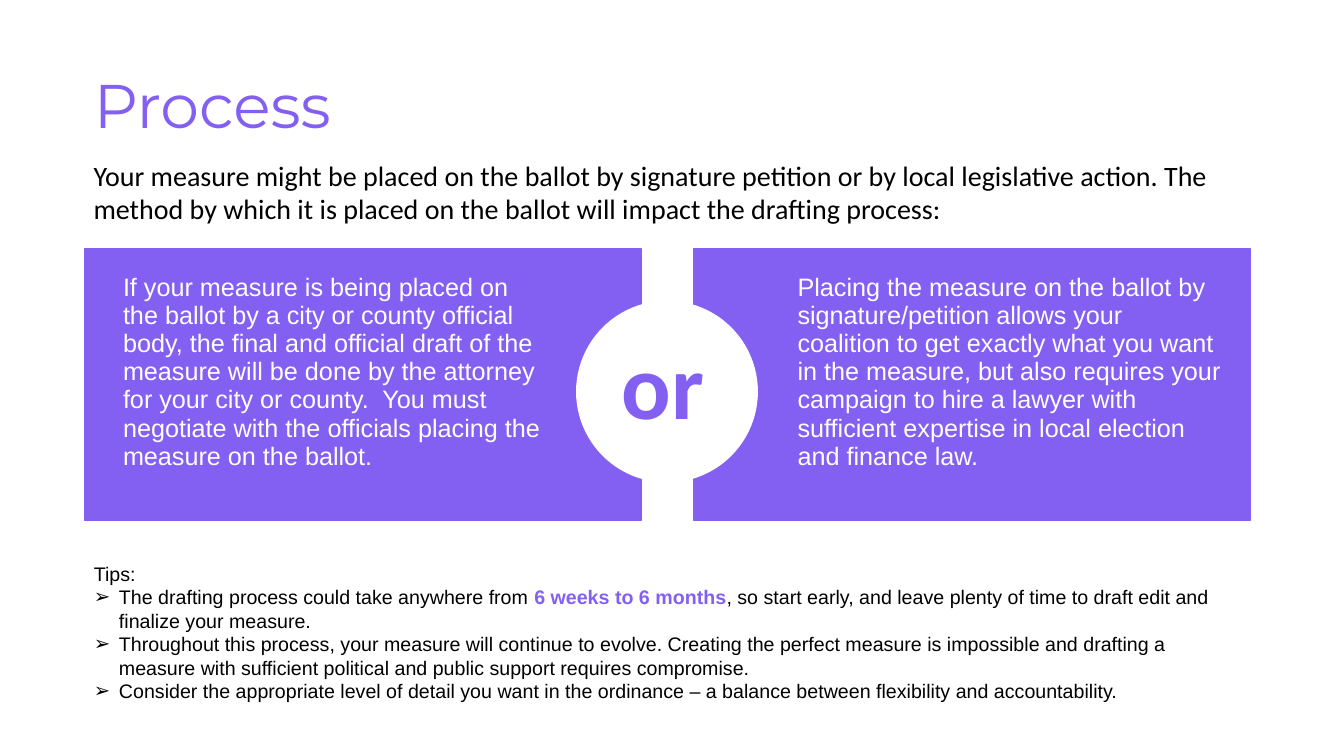
from lxml import etree
from pptx import Presentation
from pptx import util as u
from pptx.dml.color import RGBColor
from pptx.enum import shapes, text
from pptx.oxml import ns

COLORS = {"purple": "8360F2", "white": "FFFFFF", "black": "000000"}


class SlideBuilder:
    """Holds the style and the current slide."""

    def __init__(self, page, font="Arial"):
        self.page = page
        self.font = font

    def color(self, name):
        return RGBColor.from_string(COLORS[name])

    def place(self, box, left, top, width, height):
        box.left, box.top = u.Inches(left), u.Inches(top)
        box.width, box.height = u.Inches(width), u.Inches(height)

    def frame(self, box, anchor=text.MSO_ANCHOR.TOP):
        frame = box.text_frame
        frame.word_wrap = True
        frame.auto_size = text.MSO_AUTO_SIZE.NONE
        frame.vertical_anchor = anchor
        return frame

    def span(self, para, words, size, color, bold=False, font=None):
        span = para.add_run()
        span.text = words
        span.font.name = font or self.font
        span.font.size = u.Pt(size)
        span.font.bold = bold
        span.font.color.rgb = self.color(color)

    def title(self, words, area):
        box = self.page.shapes.title
        self.place(box, *area)
        para = self.frame(box, text.MSO_ANCHOR.MIDDLE).paragraphs[0]
        para.alignment = text.PP_ALIGN.LEFT
        para.line_spacing = 0.9
        self.span(para, words, 44, "purple", font="Montserrat")

    def label(self, words, area, size, color, bold=False):
        box = self.page.shapes.add_textbox(*map(u.Inches, area))
        para = self.frame(box).paragraphs[0]
        self.span(para, words, size, color, bold, "Calibri")

    def shape(self, kind, area, color):
        box = self.page.shapes.add_shape(kind, *map(u.Inches, area))
        box.shadow.inherit = False
        box.fill.solid()
        box.fill.fore_color.rgb = self.color(color)
        box.line.color.rgb = self.color(color)
        box.line.width = u.Pt(1)

    def table(self, words, area):
        table = self.page.shapes.add_table(1, 1, *map(u.Inches, area)).table
        table.first_row = table.horz_banding = False
        cell = table.cell(0, 0)
        props = cell._tc.get_or_add_tcPr()
        for side in ("a:lnL", "a:lnR", "a:lnT", "a:lnB"):
            border = etree.SubElement(props, ns.qn(side))
            etree.SubElement(border, ns.qn("a:noFill"))
        cell.fill.background()
        self.span(cell.text_frame.paragraphs[0], words, 18, "white")

    def bullet(self, para, mark, indent):
        props = para._p.get_or_add_pPr()
        props.set("marL", str(u.Inches(indent)))
        props.set("indent", str(-u.Inches(indent)))
        if mark:
            etree.SubElement(props, ns.qn("a:buFont"), typeface=self.font)
            etree.SubElement(props, ns.qn("a:buChar"), char=mark)
        else:
            etree.SubElement(props, ns.qn("a:buNone"))

    def tips(self, heading, items, area):
        box = self.page.placeholders[1]
        self.place(box, *area)
        frame = self.frame(box)
        for number, spans in enumerate([[(heading, False)], *items]):
            para = frame.add_paragraph() if number else frame.paragraphs[0]
            self.bullet(para, "➢" if number else None, 0.25 if number else 0)
            para.space_before = u.Pt(0)
            for words, strong in spans:
                self.span(para, words, 14, "purple" if strong else "black", strong)


def main():
    deck = Presentation()
    deck.slide_width, deck.slide_height = u.Inches(13.33), u.Inches(7.5)
    slide = SlideBuilder(deck.slides.add_slide(deck.slide_layouts[1]))

    # Title and introduction
    slide.title("Process", (0.83, 0.56, 8.77, 1.04))
    slide.label(
        "Your measure might be placed on the ballot by signature petition or by "
        "local legislative action. The method by which it is placed on the ballot "
        "will impact the drafting process:",
        (0.83, 1.52, 11.56, 1.28), 20, "black")

    # Two option panels joined by a circle
    for left in (0.84, 6.88):
        slide.shape(shapes.MSO_SHAPE.RECTANGLE, (left, 2.47, 5.52, 2.69), "purple")
    slide.shape(shapes.MSO_SHAPE.OVAL, (5.72, 2.99, 1.79, 1.79), "white")
    slide.label("or", (6.07, 3.2, 1.16, 1.21), 66, "purple", bold=True)

    # Option texts
    slide.table(
        "If your measure is being placed on the ballot by a city or county official "
        "body, the final and official draft of the measure will be done by the "
        "attorney for your city or county.  You must negotiate with the officials "
        "placing the measure on the ballot.",
        (1.12, 2.66, 4.37, 2.23))
    slide.table(
        "Placing the measure on the ballot by signature/petition allows your "
        "coalition to get exactly what you want in the measure, but also requires "
        "your campaign to hire a lawyer with sufficient expertise in local election "
        "and finance law.",
        (7.81, 2.66, 4.4, 1.99))

    # Tips
    slide.tips("Tips:", [
        [("The drafting process could take anywhere from ", False),
         ("6 weeks to 6 months", True),
         (", so start early, and leave plenty of time to draft edit and finalize "
          "your measure.", False)],
        [("Throughout this process, your measure will continue to evolve. Creating "
          "the perfect measure is impossible and drafting a measure with sufficient "
          "political and public support requires compromise.", False)],
        [("Consider the appropriate level of detail you want in the ordinance – a "
          "balance between flexibility and accountability.", False)],
    ], (0.83, 5.52, 11.56, 1.79))

    deck.save("out.pptx")


if __name__ == "__main__":
    main()
